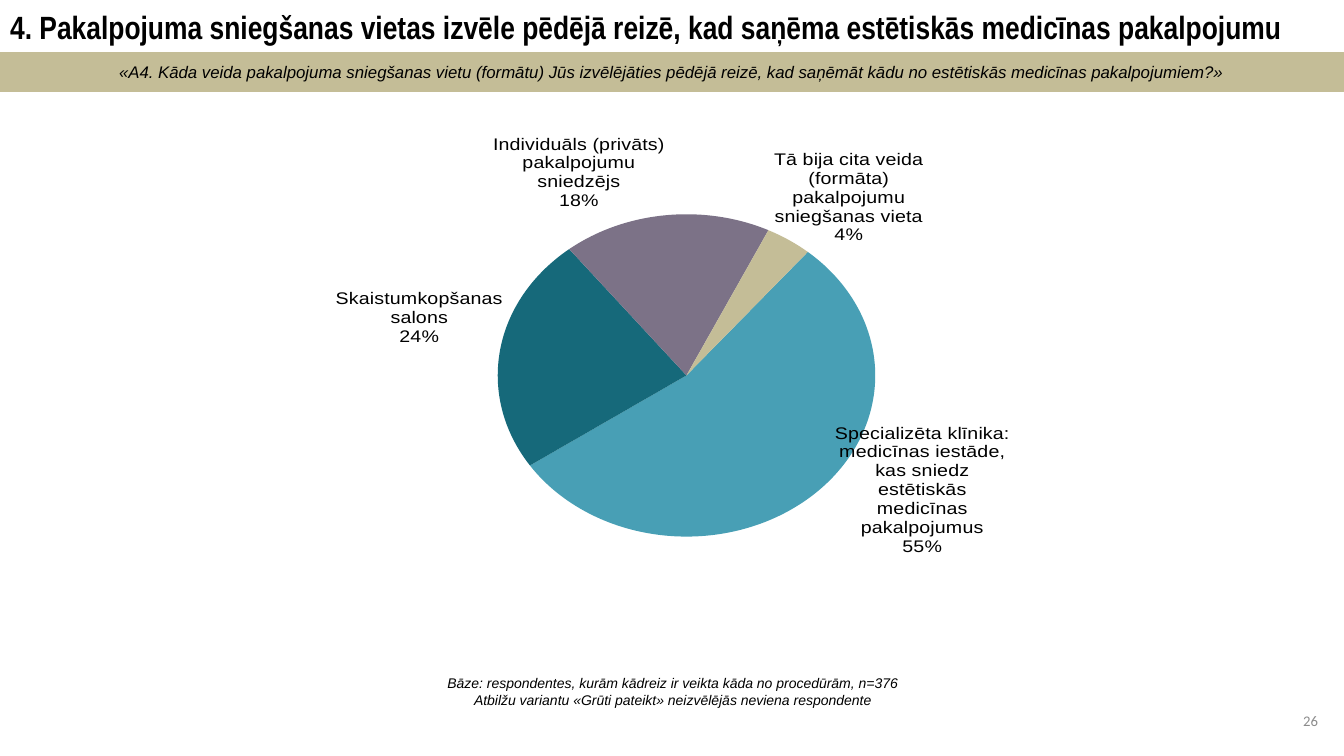
import pptx
import pptx.util
import pptx.chart.data
import pptx.dml.color
import pptx.enum.chart
import pptx.enum.shapes
import pptx.enum.text
import lxml.etree

Inches = pptx.util.Inches
Pt = pptx.util.Pt
RGBColor = pptx.dml.color.RGBColor
ALIGN = pptx.enum.text.PP_ALIGN
ANCHOR = pptx.enum.text.MSO_ANCHOR
OUTSIDE_END = pptx.enum.chart.XL_LABEL_POSITION.OUTSIDE_END
CHART = "{http://schemas.openxmlformats.org/drawingml/2006/chart}"

BLACK = RGBColor(0x00, 0x00, 0x00)
GREY = RGBColor(0x8C, 0x8C, 0x8C)
SAND = RGBColor(0xC4, 0xBD, 0x97)
SKY = RGBColor(0x48, 0x9F, 0xB5)
TEAL = RGBColor(0x16, 0x69, 0x7A)
MAUVE = RGBColor(0x7C, 0x72, 0x87)
SILVER = RGBColor(0xBF, 0xBF, 0xBF)

# Category, share, slice colour, label shift as a fraction of the chart
PROVIDERS = [
    ("Specializēta klīnika: medicīnas iestāde, kas sniedz estētiskās medicīnas pakalpojumus",
     55, SKY, (0.02, -0.02)),
    ("Skaistumkopšanas salons", 24, TEAL, (0.01, -0.01)),
    ("Individuāls (privāts) pakalpojumu sniedzējs", 18, MAUVE, None),
    ("Tā bija cita veida (formāta) pakalpojumu sniegšanas vieta", 4, SAND, (-0.02, 0.02)),
    ("Grūti pateikt", None, SILVER, None),
]


def write_text(frame, text, font="Arial", size=12, color=BLACK, bold=False,
               italic=False, align=ALIGN.LEFT, anchor=ANCHOR.MIDDLE):
    """Fill a text frame with one paragraph per line of text."""
    frame.word_wrap = True
    frame.auto_size = pptx.enum.text.MSO_AUTO_SIZE.NONE
    frame.vertical_anchor = anchor
    for index, line in enumerate(text.split("\n")):
        para = frame.paragraphs[0] if index == 0 else frame.add_paragraph()
        para.alignment = align
        para.line_spacing = 1.0
        para.space_before = Pt(0)
        span = para.add_run()
        span.text = line
        span.font.name = font
        span.font.size = Pt(size)
        span.font.bold = bold
        span.font.italic = italic
        span.font.color.rgb = color


def add_layout(parent, position, **values):
    """Put a manual layout into a chart element."""
    for old in parent.findall(CHART + "layout"):
        parent.remove(old)
    layout = lxml.etree.Element(CHART + "layout")
    manual = lxml.etree.SubElement(layout, CHART + "manualLayout")
    for name, value in values.items():
        lxml.etree.SubElement(manual, CHART + name).set("val", str(value))
    parent.insert(position, layout)


def set_child(parent, name, value):
    """Set a chart element's value, adding the element at the end if missing."""
    child = parent.find(CHART + name)
    if child is None:
        child = lxml.etree.SubElement(parent, CHART + name)
    child.set("val", value)


def show_name_and_share(element):
    """Show category and share on separate lines of a data label."""
    for name, value in (("showVal", "1"), ("showCatName", "1"), ("showPercent", "0")):
        set_child(element, name, value)
    separator = lxml.etree.Element(CHART + "separator")
    separator.text = "\n"
    element.find(CHART + "showBubbleSize").addnext(separator)


class SurveyPage:
    def __init__(self, deck):
        self.page = deck.slides.add_slide(deck.slide_layouts[5])

    def title(self, text, *place):
        box = self.page.shapes.title
        box.left, box.top, box.width, box.height = map(Inches, place)
        write_text(box.text_frame, text, font="Arial Narrow", size=23, bold=True)

    def band(self, text, *place):
        box = self.page.shapes.add_shape(
            pptx.enum.shapes.MSO_SHAPE.RECTANGLE, *map(Inches, place))
        box.shadow.inherit = False
        box.fill.solid()
        box.fill.fore_color.rgb = SAND
        box.line.color.rgb = SAND
        box.line.width = Pt(0.75)
        write_text(box.text_frame, text, italic=True, align=ALIGN.CENTER)

    def text(self, text, *place, **style):
        box = self.page.shapes.add_textbox(*map(Inches, place))
        write_text(box.text_frame, text, **style)

    def pie(self, providers, *place):
        data = pptx.chart.data.CategoryChartData(number_format="0")
        data.categories = [provider[0] for provider in providers]
        data.add_series("Series 1", [provider[1] for provider in providers])
        chart = self.page.shapes.add_chart(
            pptx.enum.chart.XL_CHART_TYPE.PIE, *map(Inches, place), data).chart
        chart.has_legend = False
        chart.has_title = False
        chart.font.name = "Arial"
        chart.font.size = Pt(10)
        chart.font.color.rgb = BLACK

        plot = chart.plots[0]
        plot.vary_by_categories = True
        add_layout(plot._element.getparent(), 0, layoutTarget="inner", xMode="edge",
                   yMode="edge", x=0.307, y=0.183, w=0.417, h=0.82)
        set_child(plot._element, "firstSliceAng", "40")

        series = plot.series[0]
        labels = series.data_labels
        labels.number_format = '0"%"'
        labels.number_format_is_linked = False
        labels.position = OUTSIDE_END
        labels.font.name = "Arial"
        labels.font.size = Pt(14)
        labels.font.color.rgb = BLACK
        show_name_and_share(labels._element)
        set_child(labels._element, "showLeaderLines", "0")

        for index, (_, _, color, shift) in enumerate(providers):
            point = series.points[index]
            point.format.fill.solid()
            point.format.fill.fore_color.rgb = color
            if shift:
                label = point.data_label
                label.font.size = Pt(14)
                label.position = OUTSIDE_END
                element = labels._element.findall(CHART + "dLbl")[-1]
                add_layout(element, 1, x=shift[0], y=shift[1])
                show_name_and_share(element)


def main():
    deck = pptx.Presentation()
    deck.slide_width = Inches(13.33)
    deck.slide_height = Inches(7.5)
    survey = SurveyPage(deck)

    # Heading and question
    survey.title("4. Pakalpojuma sniegšanas vietas izvēle pēdējā reizē, kad saņēma "
                 "estētiskās medicīnas pakalpojumu", 0, 0, 13.33, 0.52)
    survey.band("«A4. Kāda veida pakalpojuma sniegšanas vietu (formātu) Jūs izvēlējāties "
                "pēdējā reizē, kad saņēmāt kādu no estētiskās medicīnas pakalpojumiem?»",
                0, 0.52, 13.33, 0.39)

    # Shares of providers
    survey.pie(PROVIDERS, 2.18, 1.15, 8.98, 5.11)

    # Base note and page number
    survey.text("Bāze: respondentes, kurām kādreiz ir veikta kāda no procedūrām, n=376\n"
                "Atbilžu variantu «Grūti pateikt» neizvēlējās neviena respondente",
                1.67, 6.58, 10, 0.55, size=10, italic=True, align=ALIGN.CENTER)
    survey.text("26", 11.75, 7.01, 1.42, 0.4, font="Calibri", size=10.5, color=GREY,
                align=ALIGN.RIGHT, anchor=ANCHOR.TOP)
    deck.save("out.pptx")


if __name__ == "__main__":
    main()
